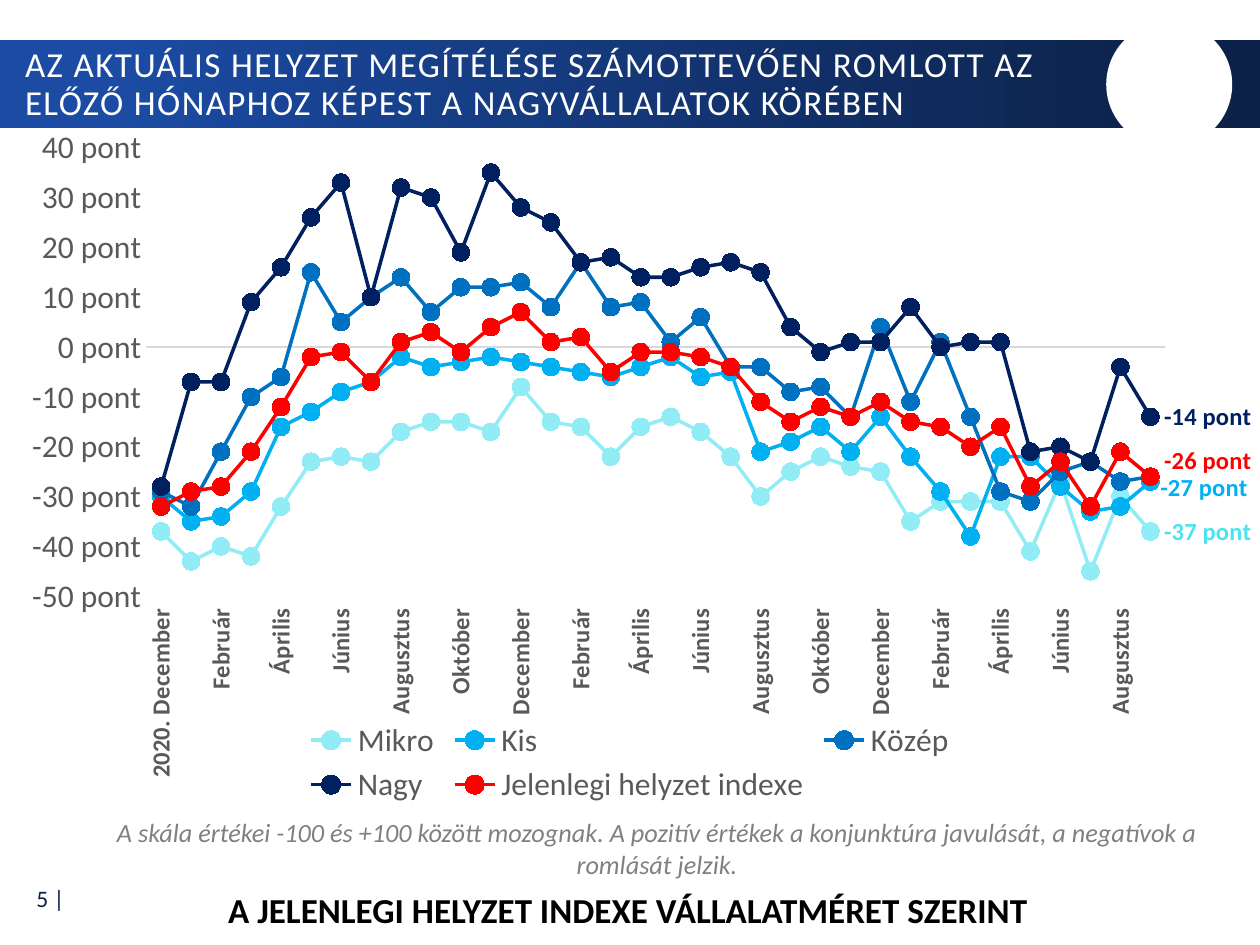
from lxml import etree
from pptx import Presentation
from pptx.chart.data import CategoryChartData
from pptx.dml.color import RGBColor
from pptx.enum import chart as ch, shapes, text
from pptx.oxml import parse_xml
from pptx.oxml.ns import nsdecls, qn
from pptx.util import Inches, Pt

FONT = "Calibri"
WHITE = RGBColor(0xFF, 0xFF, 0xFF)
BLACK = RGBColor(0, 0, 0)
GRAY = RGBColor(0x80, 0x80, 0x80)
AXIS_GRAY = RGBColor(0x59, 0x59, 0x59)
LINE_GRAY = RGBColor(0xD9, 0xD9, 0xD9)
BLUE = RGBColor(0x1B, 0x4B, 0xA3)
NAVY = RGBColor(0x0C, 0x21, 0x48)
PALE_CYAN = RGBColor(0x92, 0xEC, 0xF6)
CYAN = RGBColor(0x4B, 0xE2, 0xF1)
SKY = RGBColor(0x00, 0xB0, 0xF0)
MID_BLUE = RGBColor(0x00, 0x70, 0xC0)
DARK_BLUE = RGBColor(0x00, 0x20, 0x60)
RED = RGBColor(0xFF, 0, 0)

TITLE = ("AZ AKTUÁLIS HELYZET MEGÍTÉLÉSE SZÁMOTTEVŐEN ROMLOTT AZ "
         "ELŐZŐ HÓNAPHOZ KÉPEST A NAGYVÁLLALATOK KÖRÉBEN")
NOTE = ("A skála értékei -100 és +100 között mozognak. A pozitív értékek "
        "a konjunktúra javulását, a negatívok a romlását jelzik.")
CAPTION = "A JELENLEGI HELYZET INDEXE VÁLLALATMÉRET SZERINT"
PAGE_NUMBER = "5 |"

MONTHS = ["Január", "Február", "Március", "Április", "Május", "Június", "Július",
          "Augusztus", "Szeptember", "Október", "November", "December"]
CATEGORIES = (["2020. December", "2021. Január"] + MONTHS[1:]
              + ["2022. Január"] + MONTHS[1:]
              + ["2023. január"] + MONTHS[1:9])
NUMBER_FORMAT = 'General\\ "pont"'
PLOT_AREA = {"x": 0.116, "y": 0.03, "w": 0.809, "h": 0.657}

# name, line colour, end label colour (None: no label), label shift, values
SERIES = [
    ("Mikro", PALE_CYAN, CYAN, None,
     [-37, -43, -40, -42, -32, -23, -22, -23, -17, -15, -15, -17, -8, -15, -16, -22, -16,
      -14, -17, -22, -30, -25, -22, -24, -25, -35, -31, -31, -31, -41, -27, -45, -30, -37]),
    ("Kis", SKY, SKY, (-0.003, 0.01),
     [-30, -35, -34, -29, -16, -13, -9, -7, -2, -4, -3, -2, -3, -4, -5, -6, -4,
      -2, -6, -5, -21, -19, -16, -21, -14, -22, -29, -38, -22, -22, -28, -33, -32, -27]),
    ("Közép", MID_BLUE, None, None,
     [-29, -32, -21, -10, -6, 15, 5, 10, 14, 7, 12, 12, 13, 8, 17, 8, 9,
      1, 6, -4, -4, -9, -8, -14, 4, -11, 1, -14, -29, -31, -25, -23, -27, -26]),
    ("Nagy", DARK_BLUE, DARK_BLUE, None,
     [-28, -7, -7, 9, 16, 26, 33, 10, 32, 30, 19, 35, 28, 25, 17, 18, 14,
      14, 16, 17, 15, 4, -1, 1, 1, 8, 0, 1, 1, -21, -20, -23, -4, -14]),
    ("Jelenlegi helyzet indexe", RED, RED, (0, -0.023),
     [-32, -29, -28, -21, -12, -2, -1, -7, 1, 3, -1, 4, 7, 1, 2, -5, -1,
      -1, -2, -4, -11, -15, -12, -14, -11, -15, -16, -20, -16, -28, -23, -32, -21, -26]),
]


def style_font(font, size, color, bold=False, italic=False):
    font.name, font.size, font.bold, font.italic = FONT, Pt(size), bold, italic
    font.color.rgb = color


def add_text(page, place, words, size, color, align, anchor=text.MSO_ANCHOR.TOP, **style):
    box = page.shapes.add_textbox(*map(Inches, place))
    frame = box.text_frame
    frame.word_wrap = True
    frame.vertical_anchor = anchor
    para = frame.paragraphs[0]
    para.alignment = align
    span = para.add_run()
    span.text = words
    style_font(span.font, size, color, **style)
    return para, span


def add_plain_shape(page, kind, place):
    shape = page.shapes.add_shape(kind, *map(Inches, place))
    shape.shadow.inherit = False
    shape.line.fill.background()
    return shape


def layout_xml(parts):
    """Manual chart layout from (tag, value) pairs."""
    inner = "".join(f'<c:{tag} val="{value}"/>' for tag, value in parts)
    return parse_xml(f'<c:layout {nsdecls("c")}><c:manualLayout>{inner}'
                     "</c:manualLayout></c:layout>")


def add_end_label(series, color, shift):
    series.data_labels.show_value = False
    label = series.points[len(CATEGORIES) - 1].data_label
    style_font(label.font, 14, color, bold=True)
    label.position = ch.XL_LABEL_POSITION.RIGHT
    if shift:
        index = series._element.find(".//" + qn("c:dLbl") + "/" + qn("c:idx"))
        index.addnext(layout_xml(zip("xy", shift)))


def add_line_chart(page):
    data = CategoryChartData(number_format=NUMBER_FORMAT)
    data.categories = CATEGORIES
    for name, *_, values in SERIES:
        data.add_series(name, values)
    chart = page.shapes.add_chart(ch.XL_CHART_TYPE.LINE_MARKERS, Inches(0), Inches(1.01),
                                  Inches(10), Inches(5.42), data).chart
    chart.has_title = False
    style_font(chart.font, 18, BLACK)
    chart.has_legend = True
    chart.legend.position = ch.XL_LEGEND_POSITION.BOTTOM
    chart.legend.include_in_layout = False
    style_font(chart.legend.font, 18, AXIS_GRAY)
    chart.plots[0].vary_by_categories = False

    months = chart.category_axis
    months.tick_label_position = ch.XL_TICK_LABEL_POSITION.LOW
    months.format.line.color.rgb = LINE_GRAY
    months.format.line.width = Pt(0.75)
    style_font(months.tick_labels.font, 14, AXIS_GRAY, bold=True)
    months._element.find(qn("c:txPr")).find(qn("a:bodyPr")).set("rot", "-5400000")
    skip = parse_xml(f'<c:tickLblSkip {nsdecls("c")} val="2"/>')
    months._element.find(qn("c:noMultiLvlLbl")).addprevious(skip)

    points = chart.value_axis
    points.minimum_scale, points.maximum_scale, points.major_unit = -50, 40, 10
    points.has_major_gridlines = False
    points.format.line.fill.background()
    points.tick_labels.number_format = NUMBER_FORMAT
    points.tick_labels.number_format_is_linked = False
    style_font(points.tick_labels.font, 18, AXIS_GRAY)
    for axis in (months, points):
        axis.major_tick_mark = axis.minor_tick_mark = ch.XL_TICK_MARK.NONE

    for series, (_, color, label_color, shift, _) in zip(chart.plots[0].series, SERIES):
        series.smooth = False
        series.format.line.color.rgb = color
        series.format.line.width = Pt(2)
        series.marker.style = ch.XL_MARKER_STYLE.CIRCLE
        series.marker.size = 10
        series.marker.format.fill.solid()
        series.marker.format.fill.fore_color.rgb = color
        series.marker.format.line.color.rgb = color
        if label_color is not None:
            add_end_label(series, label_color, shift)

    plot_area = chart._chartSpace.find(".//" + qn("c:plotArea"))
    for old in plot_area.findall(qn("c:layout")):
        plot_area.remove(old)
    parts = [("layoutTarget", "inner"), ("xMode", "edge"), ("yMode", "edge")]
    plot_area.insert(0, layout_xml(parts + list(PLOT_AREA.items())))


def main():
    deck = Presentation()
    deck.slide_width, deck.slide_height = Inches(10), Inches(7.5)
    page = deck.slides.add_slide(deck.slide_layouts[6])
    align, middle = text.PP_ALIGN, text.MSO_ANCHOR.MIDDLE

    add_text(page, (0.01, 6.94, 0.6, 0.37), PAGE_NUMBER, 13.5, NAVY, align.RIGHT, middle)
    band = add_plain_shape(page, shapes.MSO_SHAPE.RECTANGLE, (0, 0.32, 10, 0.7))
    band.fill.gradient()
    band.fill.gradient_angle = 0
    for stop, color, position in zip(band.fill.gradient_stops, (BLUE, NAVY), (0.09, 0.95)):
        stop.color.rgb, stop.position = color, position
    circle = add_plain_shape(page, shapes.MSO_SHAPE.OVAL, (8.78, 0.17, 1, 1))
    circle.fill.solid()
    circle.fill.fore_color.rgb = WHITE

    para, span = add_text(page, (0.1, 0.34, 8.81, 0.67), TITLE, 20, WHITE, align.LEFT, middle)
    para.line_spacing = 0.9
    span.font._element.set("spc", "80")
    add_text(page, (0.65, 6.43, 9.13, 0.61), NOTE, 15, GRAY, align.CENTER, italic=True)
    add_text(page, (0, 7, 9.97, 0.44), CAPTION, 20, BLACK, align.CENTER, bold=True)
    add_line_chart(page)
    deck.save("out.pptx")


if __name__ == "__main__":
    main()
